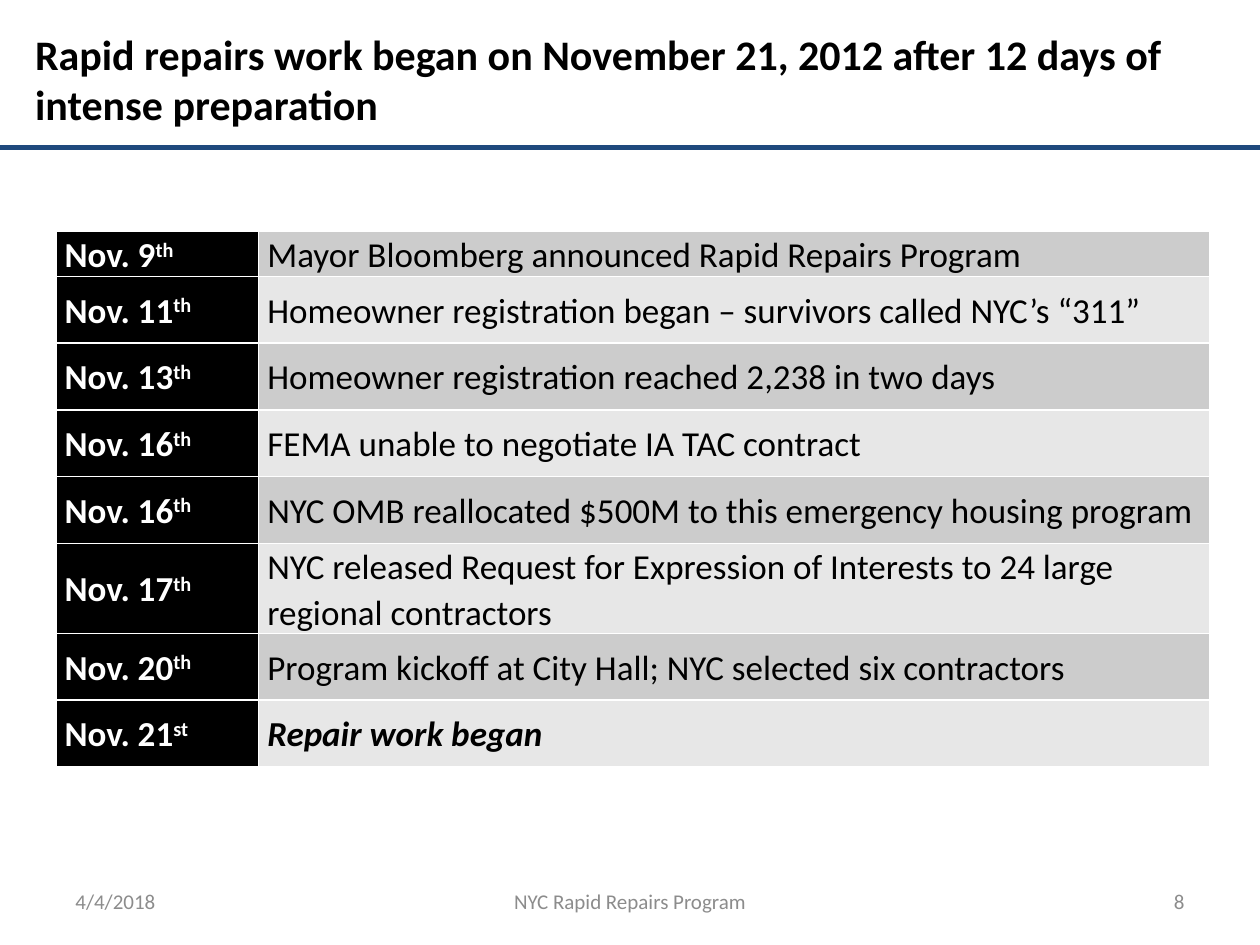
"""Build the slide with the timeline of the rapid repairs start-up."""
from dataclasses import dataclass

import pptx
import pptx.dml.color
import pptx.enum.shapes
import pptx.enum.text
import pptx.oxml
import pptx.oxml.ns
import pptx.util

Pt = pptx.util.Pt
ALIGN = pptx.enum.text.PP_ALIGN
MIDDLE = pptx.enum.text.MSO_ANCHOR.MIDDLE
FONT = "Calibri"
BLACK, WHITE, GRAY, NAVY = "000000", "FFFFFF", "8C8C8C", "1F497D"
BANDS = ("CCCCCC", "E7E7E7")


@dataclass
class Label:
    text: str
    left: float
    top: float
    width: float
    height: float
    size: float = 12
    color: str = GRAY
    bold: bool = False
    align: ALIGN = ALIGN.LEFT


@dataclass
class Event:
    day: str
    suffix: str
    text: str
    emphasis: bool = False
    height: float = 38.16


LABELS = (
    Label("Rapid repairs work began on November 21, 2012 after 12 days of intense preparation",
          12.96, 0, 689.76, 90, 24, BLACK, True),
    Label("4/4/2018", 36, 500.4, 168, 28.8),
    Label("NYC Rapid Repairs Program", 246, 500.4, 228, 28.8, align=ALIGN.CENTER),
    Label("8", 516, 500.4, 168, 28.8, align=ALIGN.RIGHT),
)
EVENTS = (
    Event("Nov. 9", "th", "Mayor Bloomberg announced Rapid Repairs Program", height=6.5),
    Event("Nov. 11", "th", "Homeowner registration began – survivors called NYC’s “311”"),
    Event("Nov. 13", "th", "Homeowner registration reached 2,238 in two days"),
    Event("Nov. 16", "th", "FEMA unable to negotiate IA TAC contract"),
    Event("Nov. 16", "th", "NYC OMB reallocated $500M to this emergency housing program"),
    Event("Nov. 17", "th", "NYC released Request for Expression of Interests to 24 large regional contractors"),
    Event("Nov. 20", "th", "Program kickoff at City Hall; NYC selected six contractors"),
    Event("Nov. 21", "st", "Repair work began", emphasis=True),
)


def rgb(value: str) -> pptx.dml.color.RGBColor:
    return pptx.dml.color.RGBColor.from_string(value)


def set_font(paragraph, size: float, color: str, bold: bool, italic: bool = False) -> None:
    font = paragraph.font
    font.name, font.size, font.bold, font.italic = FONT, Pt(size), bold, italic
    font.color.rgb = rgb(color)


def add_label(page, label: Label) -> None:
    box = page.shapes.add_textbox(Pt(label.left), Pt(label.top), Pt(label.width), Pt(label.height))
    frame = box.text_frame
    frame.word_wrap = True
    frame.vertical_anchor = MIDDLE
    paragraph = frame.paragraphs[0]
    paragraph.text = label.text
    paragraph.alignment = label.align
    set_font(paragraph, label.size, label.color, label.bold)


def add_rule(page) -> None:
    rule = page.shapes.add_connector(
        pptx.enum.shapes.MSO_CONNECTOR.STRAIGHT, Pt(0), Pt(84.24), Pt(720), Pt(84.24))
    rule.line.width = Pt(2.5)
    rule.line.color.rgb = rgb(NAVY)
    rule.element.spPr.append(pptx.oxml.parse_xml(
        f'<a:effectLst {pptx.oxml.ns.nsdecls("a")}/>'))


def style_cell(cell, fill: str, color: str, bold: bool, italic: bool = False) -> None:
    properties = cell._tc.get_or_add_tcPr()
    for side in ("lnL", "lnR", "lnT", "lnB"):
        properties.append(pptx.oxml.parse_xml(
            f'<a:{side} {pptx.oxml.ns.nsdecls("a")} w="{Pt(1)}"><a:solidFill>'
            f'<a:srgbClr val="{WHITE}"/></a:solidFill></a:{side}>'))
    cell.fill.solid()
    cell.fill.fore_color.rgb = rgb(fill)
    cell.vertical_anchor = MIDDLE
    cell.margin_left = cell.margin_right = Pt(5)
    cell.margin_top = cell.margin_bottom = Pt(0)
    paragraph = cell.text_frame.paragraphs[0]
    paragraph.line_spacing = 1.07
    set_font(paragraph, 20, color, bold, italic)


def add_timeline(page) -> None:
    height = sum(event.height for event in EVENTS)
    table = page.shapes.add_table(
        len(EVENTS), 2, Pt(31.9), Pt(132.2), Pt(659.5), Pt(height)).table
    for column, width in zip(table.columns, (115.9, 543.6)):
        column.width = Pt(width)
    for index, event in enumerate(EVENTS):
        table.rows[index].height = Pt(event.height)
        date, story = table.cell(index, 0), table.cell(index, 1)
        paragraph = date.text_frame.paragraphs[0]
        paragraph.add_run().text = event.day
        span = paragraph.add_run()
        span.text = event.suffix
        span.font._element.set("baseline", "30000")
        story.text = event.text
        style_cell(date, BLACK, WHITE, True)
        style_cell(story, BANDS[index % 2], BLACK, event.emphasis, event.emphasis)


def main() -> None:
    deck = pptx.Presentation()
    deck.slide_width, deck.slide_height = Pt(720), Pt(540)
    page = deck.slides.add_slide(deck.slide_layouts[6])
    add_rule(page)
    for label in LABELS:
        add_label(page, label)
    add_timeline(page)
    deck.save("out.pptx")


if __name__ == "__main__":
    main()
